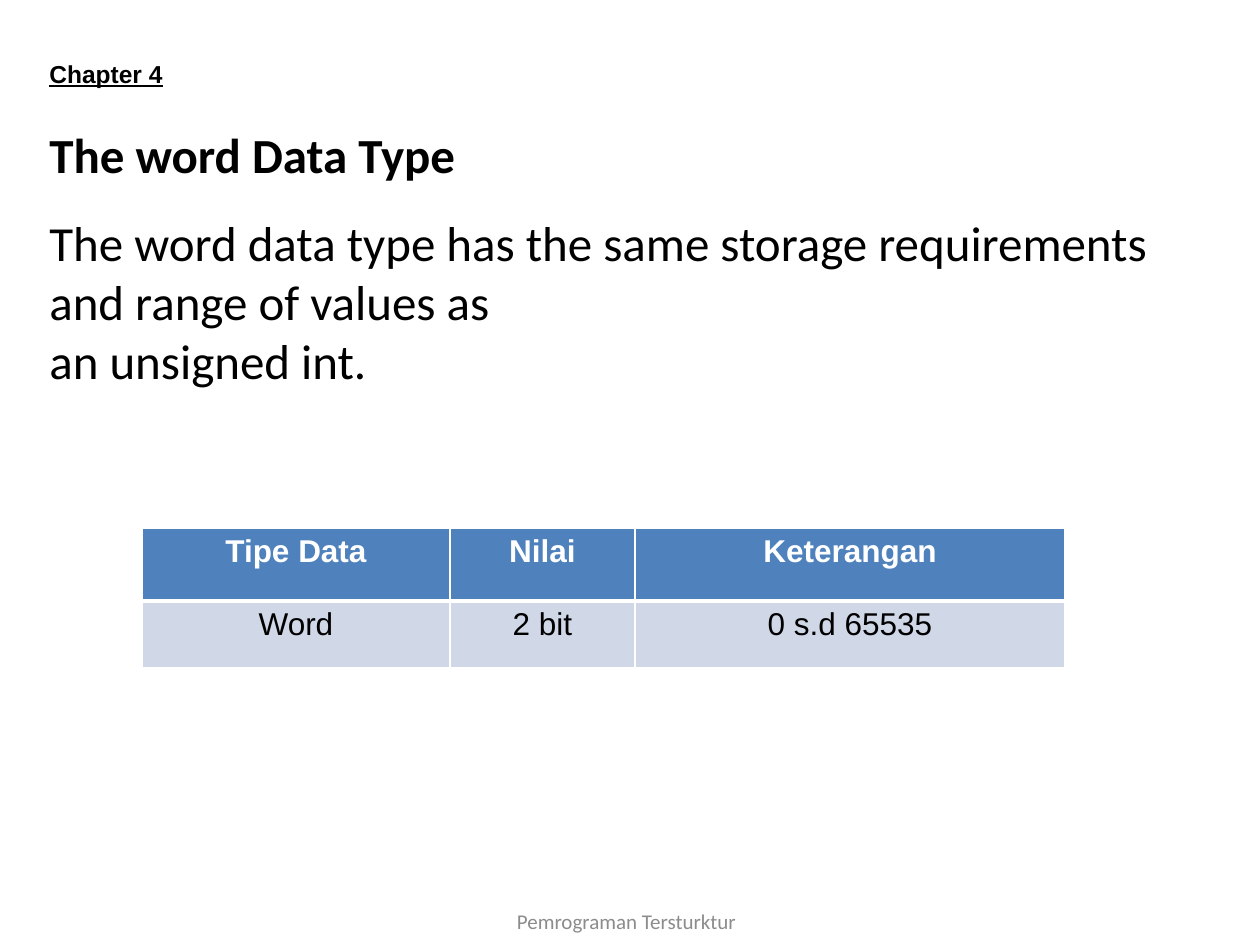
from lxml.etree import SubElement
from pptx import Presentation
from pptx.dml.color import RGBColor
from pptx.enum.text import MSO_ANCHOR, PP_ALIGN
from pptx.oxml.ns import qn
from pptx.util import Emu, Pt

SLIDE_SIZE = (1260, 945)
COLORS = {
    "text": "000000",
    "footer": "8C8C8C",
    "header_text": "FFFFFF",
    "header_fill": "4F81BD",
    "row_fill": "D0D8E8",
    "border": "FFFFFF",
}

CHAPTER = "Chapter 4"
HEADING = "The word Data Type"
BODY = [
    "The word data type has the same storage requirements and range of values as",
    "an unsigned int.",
]
FOOTER = "Pemrograman Tersturktur"
DATA_TYPES = [
    ("Tipe Data", "Nilai", "Keterangan"),
    ("Word", "2 bit", "0 s.d 65535"),
]

CHAPTER_BOX = (37, 29, 1134, 89)
BODY_BOX = (37, 118, 1173, 524)
FOOTER_BOX = (427, 896, 399, 50)
TABLE_ORIGIN = (142, 528)
COLUMN_WIDTHS = (308, 185, 430)
ROW_HEIGHTS = (73, 67)


def px(length):
    return Emu(round(length * 914400 / 126))


def add_text(paragraph, text, size, font, color, bold=False, underline=False):
    run = paragraph.add_run()
    run.text = text
    run.font.size = Pt(size)
    run.font.name = font
    run.font.bold = bold
    run.font.underline = underline
    run.font.color.rgb = RGBColor.from_string(COLORS[color])


def add_frame(slide, box, anchor):
    frame = slide.shapes.add_textbox(*map(px, box)).text_frame
    frame.word_wrap = True
    frame.vertical_anchor = anchor
    return frame


def add_borders(cell, bottom_width):
    properties = cell._tc.get_or_add_tcPr()
    for side, width in (("L", 1), ("R", 1), ("T", 1), ("B", bottom_width)):
        line = SubElement(properties, qn(f"a:ln{side}"), w=str(Pt(width)))
        fill = SubElement(line, qn("a:solidFill"))
        SubElement(fill, qn("a:srgbClr"), val=COLORS["border"])


def add_data_types(slide):
    size = (sum(COLUMN_WIDTHS), sum(ROW_HEIGHTS))
    table = slide.shapes.add_table(
        len(DATA_TYPES), len(COLUMN_WIDTHS), *map(px, TABLE_ORIGIN + size)
    ).table
    for column, width in zip(table.columns, COLUMN_WIDTHS):
        column.width = px(width)
    for row_index, (row, height) in enumerate(zip(table.rows, ROW_HEIGHTS)):
        row.height = px(height)
        header = row_index == 0
        for cell, label in zip(row.cells, DATA_TYPES[row_index]):
            # The rule between header and data belongs to both rows.
            add_borders(cell, bottom_width=3 if header else 1)
            cell.fill.solid()
            fill = COLORS["header_fill" if header else "row_fill"]
            cell.fill.fore_color.rgb = RGBColor.from_string(fill)
            paragraph = cell.text_frame.paragraphs[0]
            paragraph.alignment = PP_ALIGN.CENTER
            color = "header_text" if header else "text"
            add_text(paragraph, label, 18, "Arial", color, bold=header)


def main():
    presentation = Presentation()
    presentation.slide_width, presentation.slide_height = map(px, SLIDE_SIZE)
    slide = presentation.slides.add_slide(presentation.slide_layouts[6])

    chapter = add_frame(slide, CHAPTER_BOX, MSO_ANCHOR.MIDDLE).paragraphs[0]
    add_text(chapter, CHAPTER, 14, "Arial", "text", bold=True, underline=True)

    body = add_frame(slide, BODY_BOX, MSO_ANCHOR.TOP)
    heading = body.paragraphs[0]
    heading.space_after = Pt(17)
    add_text(heading, HEADING, 28, "Calibri", "text", bold=True)
    for sentence in BODY:
        add_text(body.add_paragraph(), sentence, 28, "Calibri", "text")

    footer = add_frame(slide, FOOTER_BOX, MSO_ANCHOR.MIDDLE).paragraphs[0]
    footer.alignment = PP_ALIGN.CENTER
    add_text(footer, FOOTER, 12, "Calibri", "footer")

    add_data_types(slide)
    presentation.save("out.pptx")


if __name__ == "__main__":
    main()
